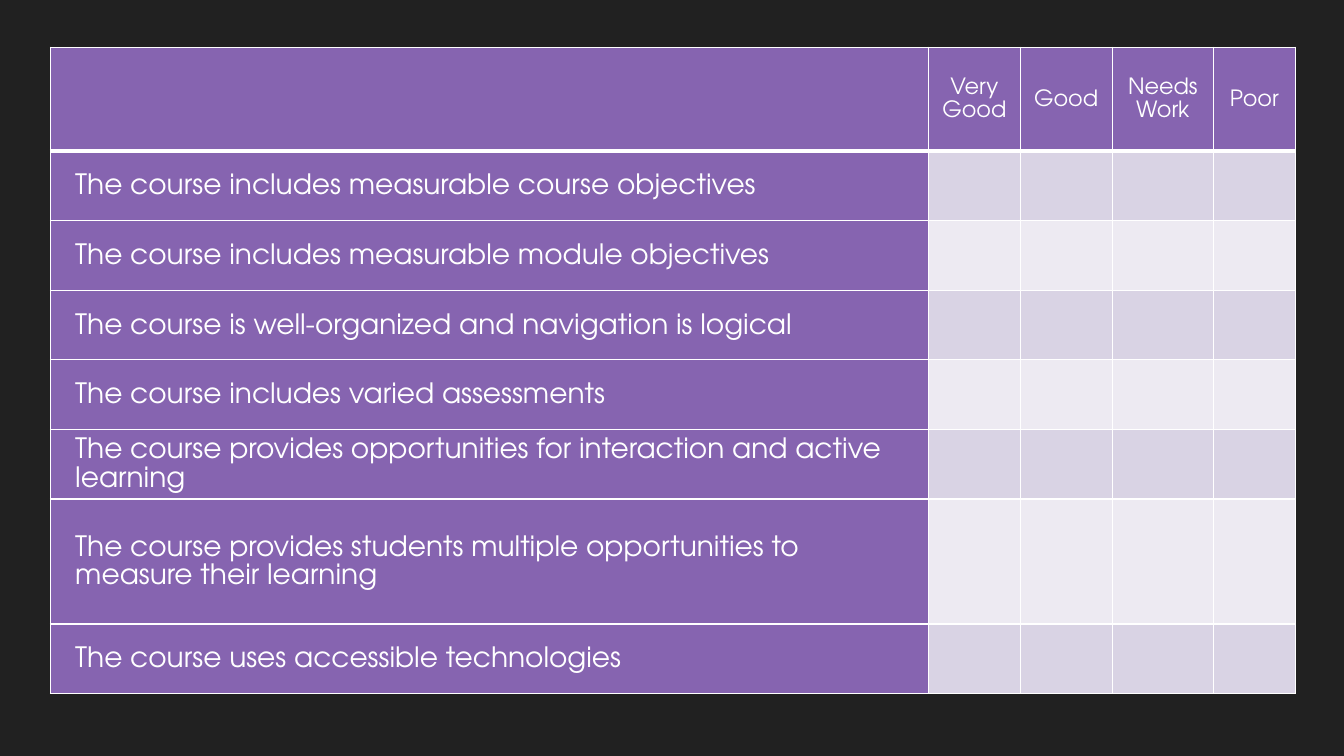
from lxml.etree import SubElement
from pptx import Presentation
from pptx.dml.color import RGBColor
from pptx.enum.text import MSO_ANCHOR as Anchor, PP_ALIGN as Align
from pptx.oxml.ns import qn
from pptx.util import Pt

FONT = "TeX Gyre Adventor"
WHITE, PURPLE, LILAC, PALE, CHARCOAL = "FFFFFF", "8664B0", "D9D3E4", "EDEAF2", "212121"
RATINGS = ["Very Good", "Good", "Needs Work", "Poor"]
CRITERIA = [
    "The course includes measurable course objectives",
    "The course includes measurable module objectives",
    "The course is well-organized and navigation is logical",
    "The course includes varied assessments",
    "The course provides opportunities for interaction and active learning",
    "The course provides students multiple opportunities to measure their learning",
    "The course uses accessible technologies",
]
COLUMN_WIDTHS = [627.2, 65.6, 65.6, 72.5, 58.3]
ROW_HEIGHTS = [74.2] + [49.7] * 5 + [89.3, 49.7]


def set_fill(target, color):
    """Give a cell or background a solid fill."""
    target.fill.solid()
    target.fill.fore_color.rgb = RGBColor.from_string(color)


def set_borders(cell, top=1, bottom=1):
    """Draw white borders around a cell, with widths in points."""
    properties = cell._tc.get_or_add_tcPr()
    for side, width in (("L", 1), ("R", 1), ("T", top), ("B", bottom)):
        line = SubElement(properties, qn(f"a:ln{side}"), w=str(Pt(width)))
        solid = SubElement(line, qn("a:solidFill"))
        SubElement(solid, qn("a:srgbClr"), val=WHITE)


def write_text(cell, text, size=20, color=WHITE, align=Align.LEFT, indent=0):
    """Write one formatted paragraph into a cell."""
    para = cell.text_frame.paragraphs[0]
    para.alignment = align
    para.line_spacing = 1.1
    if indent:
        properties = para._p.get_or_add_pPr()
        properties.set("marL", str(Pt(indent)))
        properties.set("indent", "0")
    span = para.add_run()
    span.text = text
    span.font.name = FONT
    span.font.size = Pt(size)
    span.font.bold = False
    span.font.color.rgb = RGBColor.from_string(color)


def style_cell(cell, row, column):
    """Set the margins, borders and fill that suit a cell's place."""
    cell.margin_left = cell.margin_right = Pt(5.76)
    cell.margin_top = cell.margin_bottom = Pt(2.16)
    cell.vertical_anchor = Anchor.MIDDLE
    set_borders(cell, top=3 if row == 1 else 1, bottom=3 if row == 0 else 1)
    is_heading = row == 0 or column == 0
    set_fill(cell, PURPLE if is_heading else LILAC if row % 2 else PALE)


def add_rubric(page):
    """Add the rubric table of criteria and ratings."""
    frame = page.shapes.add_table(
        len(ROW_HEIGHTS), len(COLUMN_WIDTHS), Pt(36), Pt(33.8),
        Pt(sum(COLUMN_WIDTHS)), Pt(sum(ROW_HEIGHTS)))
    table = frame.table
    table.first_col = True
    for column, width in zip(table.columns, COLUMN_WIDTHS):
        column.width = Pt(width)
    for row, height in zip(table.rows, ROW_HEIGHTS):
        row.height = Pt(height)
    for row in range(len(ROW_HEIGHTS)):
        for column in range(len(COLUMN_WIDTHS)):
            style_cell(table.cell(row, column), row, column)
    for column, rating in enumerate(RATINGS, 1):
        write_text(table.cell(0, column), rating, size=16, align=Align.CENTER)
    for row, criterion in enumerate(CRITERIA, 1):
        write_text(table.cell(row, 0), criterion, indent=12)


def main():
    """Build the deck with its one rubric slide."""
    deck = Presentation()
    deck.slide_width, deck.slide_height = Pt(960), Pt(540)
    page = deck.slides.add_slide(deck.slide_layouts[6])
    set_fill(page.background, CHARCOAL)
    add_rubric(page)
    deck.save("out.pptx")


if __name__ == "__main__":
    main()
